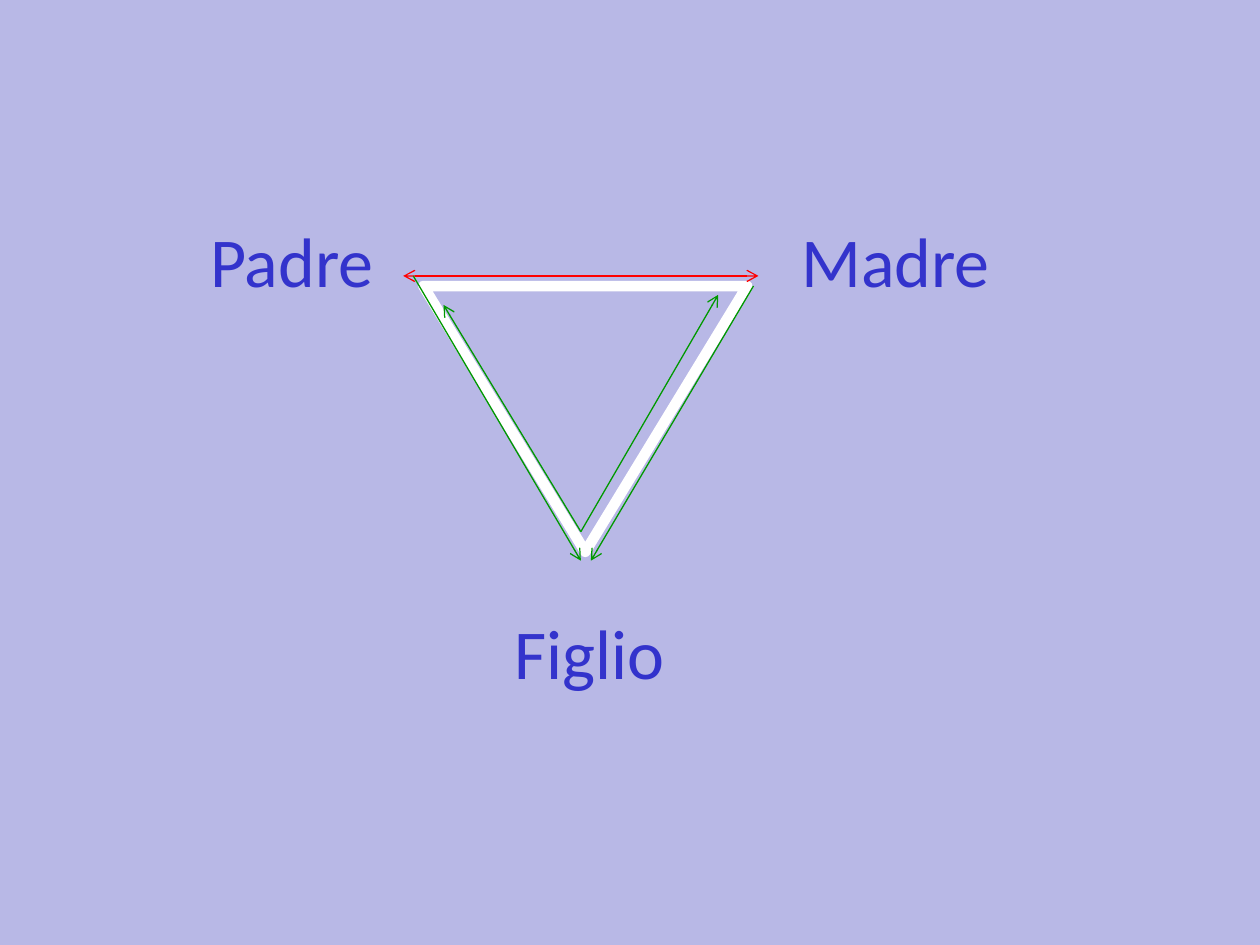
import pptx
import pptx.dml.color
import pptx.enum.shapes
import pptx.oxml.ns
import pptx.util
from lxml import etree
from pptx.util import Inches

RED = "FF0000"
GREEN = "009900"


def color(hex_string):
    """Return the RGB colour for a hex string."""
    return pptx.dml.color.RGBColor.from_string(hex_string)


def add_label(slide, text, left, top, width):
    """Add the name of one family member."""
    shape = slide.shapes.add_textbox(Inches(left), Inches(top), Inches(width), Inches(0.68))
    frame = shape.text_frame
    frame.word_wrap = True
    frame.margin_left = frame.margin_right = frame.margin_top = frame.margin_bottom = 0
    run = frame.paragraphs[0].add_run()
    run.text = text
    run.font.name = "Calibri"
    run.font.size = pptx.util.Pt(40)
    run.font.color.rgb = color("3333CC")


def add_triangle(slide):
    """Add the white outlined triangle pointing down."""
    shape = slide.shapes.add_shape(
        pptx.enum.shapes.MSO_SHAPE.ISOSCELES_TRIANGLE,
        Inches(3.36), Inches(2.27), Inches(2.57), Inches(2.11))
    shape.rotation = 180
    shape.shadow.inherit = False
    shape.fill.background()
    shape.line.color.rgb = color("FFFFFF")
    shape.line.width = pptx.util.Pt(6)


def add_arrow(slide, start, end, hex_string, ends=("tailEnd",)):
    """Add a thin arrow with open heads at the given ends."""
    connector = slide.shapes.add_connector(
        pptx.enum.shapes.MSO_CONNECTOR.STRAIGHT,
        *[Inches(value) for value in start + end])
    connector.line.color.rgb = color(hex_string)
    connector.line.width = pptx.util.Pt(0.75)
    outline = connector.line._get_or_add_ln()
    for name in ends:
        etree.SubElement(outline, pptx.oxml.ns.qn(f"a:{name}"), type="arrow")
    etree.SubElement(connector._element.spPr, pptx.oxml.ns.qn("a:effectLst"))


def main():
    """Build and save the family triangle slide."""
    presentation = pptx.Presentation()
    presentation.slide_width = Inches(10)
    presentation.slide_height = Inches(7.5)
    slide = presentation.slides.add_slide(presentation.slide_layouts[6])
    slide.background.fill.solid()
    slide.background.fill.fore_color.rgb = color("B8B8E6")

    add_label(slide, "Padre", 1.67, 1.73, 1.5)
    add_label(slide, "Madre", 6.36, 1.73, 1.7)
    add_label(slide, "Figlio", 4.08, 4.84, 1.4)
    add_triangle(slide)
    add_arrow(slide, (3.2, 2.19), (6.02, 2.19), RED, ("headEnd", "tailEnd"))
    for start, end in [
        ((4.61, 4.22), (3.52, 2.42)),
        ((5.98, 2.27), (4.69, 4.45)),
        ((3.28, 2.19), (4.61, 4.45)),
        ((4.61, 4.22), (5.7, 2.34)),
    ]:
        add_arrow(slide, start, end, GREEN)
    presentation.save("out.pptx")


if __name__ == "__main__":
    main()
